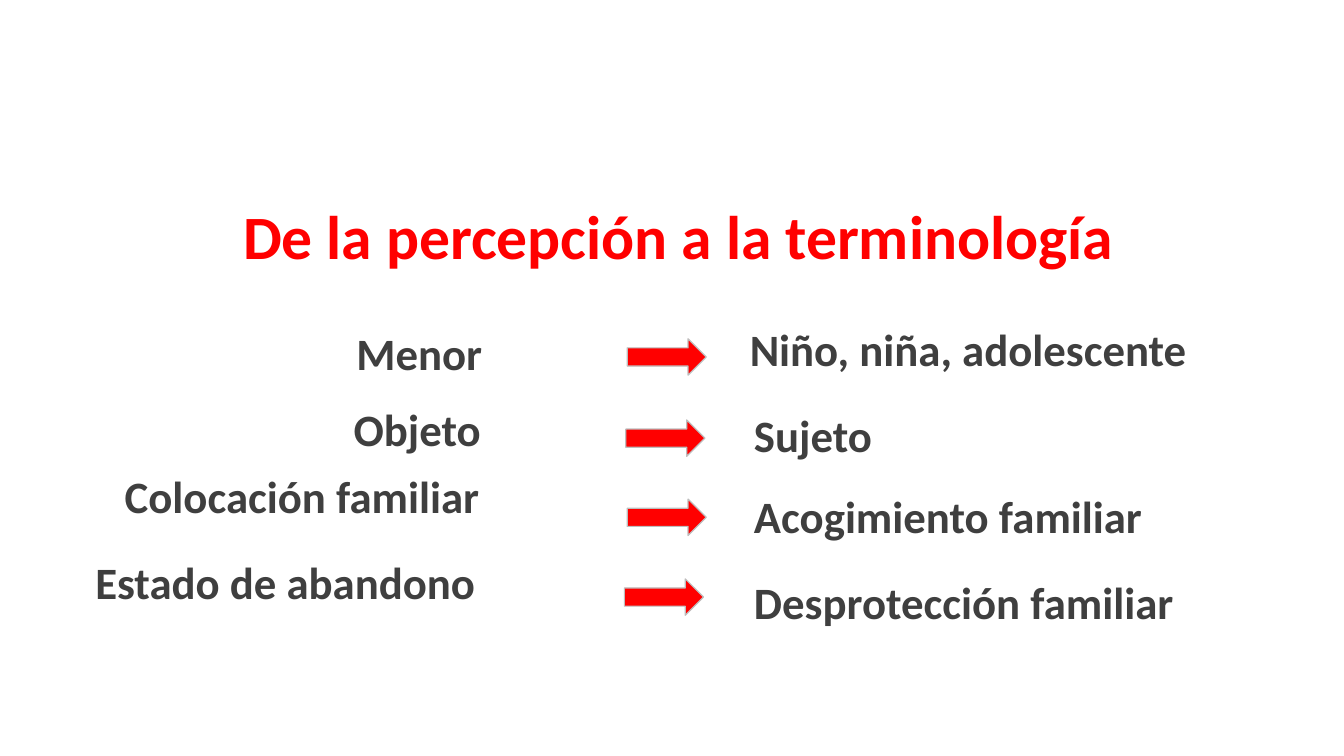
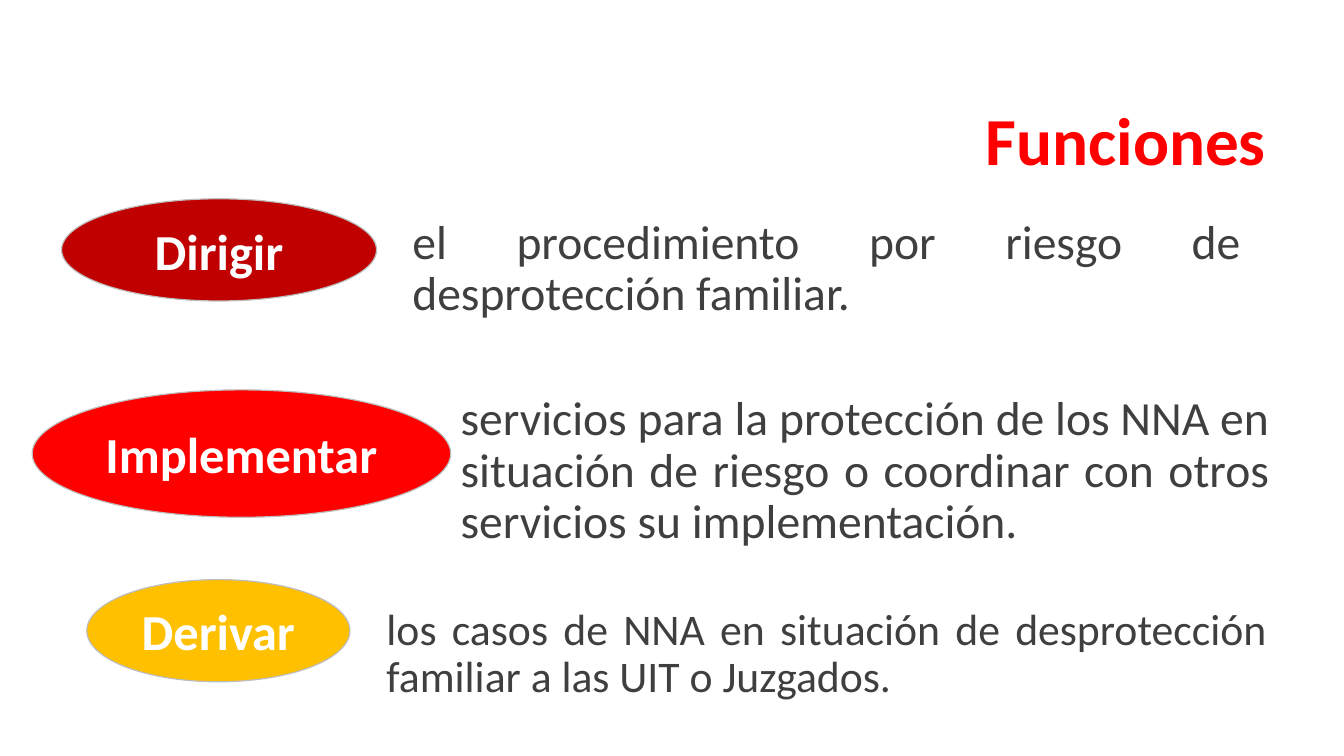
import pptx
import pptx.util
import pptx.dml.color
import pptx.enum.shapes
import pptx.enum.text

Pt = pptx.util.Pt
SHAPE = pptx.enum.shapes.MSO_SHAPE
ALIGN = pptx.enum.text.PP_ALIGN
ANCHOR = pptx.enum.text.MSO_ANCHOR

RED, DARK_RED, AMBER = "FF0000", "C00000", "FFC000"
GRAY, OUTLINE, WHITE = "3F3F3F", "BDBDBD", "FFFFFF"


def color(hex_code):
    return pptx.dml.color.RGBColor.from_string(hex_code)


class Deck:
    """Holds the shared style and the slide being built."""
    font = "Calibri"

    def __init__(self):
        self.prs = pptx.Presentation()
        self.prs.slide_width, self.prs.slide_height = Pt(960), Pt(540)
        self.slide = None

    def new_slide(self):
        self.slide = self.prs.slides.add_slide(self.prs.slide_layouts[6])

    def set_text(self, shape, text, size, ink, bold=False, align=ALIGN.LEFT,
                 spacing=1.0, anchor=ANCHOR.TOP):
        frame = shape.text_frame
        frame.word_wrap = True
        frame.vertical_anchor = anchor
        paragraph = frame.paragraphs[0]
        paragraph.text = text
        paragraph.alignment = align
        paragraph.line_spacing = spacing
        font = paragraph.font
        font.name, font.size, font.bold = self.font, Pt(size), bold
        font.color.rgb = color(ink)

    def text(self, box, text, size, ink, **style):
        shape = self.slide.shapes.add_textbox(*map(Pt, box))
        self.set_text(shape, text, size, ink, bold=True, **style)

    def title(self, box, text, size, align):
        self.text(box, text, size, RED, align=align, spacing=0.9)

    def shape(self, kind, box, fill, line=OUTLINE, weight=0.85):
        shape = self.slide.shapes.add_shape(kind, *map(Pt, box))
        shape.shadow.inherit = False
        shape.fill.solid()
        shape.fill.fore_color.rgb = color(fill)
        shape.line.color.rgb = color(line)
        shape.line.width = Pt(weight)
        return shape

    def arrow(self, left, top):
        self.shape(SHAPE.RIGHT_ARROW, (left, top, 56.5, 26), RED)

    def description(self, box, text, size):
        panel = self.shape(SHAPE.RECTANGLE, box, WHITE, WHITE, 5.5)
        self.set_text(panel, text, size, GRAY, align=ALIGN.JUSTIFY, spacing=0.9)

    def badge(self, box, text, fill):
        oval = self.shape(SHAPE.OVAL, box, fill)
        self.set_text(oval, text, 36, WHITE, bold=True, align=ALIGN.CENTER,
                      anchor=ANCHOR.MIDDLE)


def terminology_slide(deck):
    deck.new_slide()
    deck.title((145.5, 143.5, 679, 106), "De la percepción a la terminología",
               44, ALIGN.CENTER)
    # Old term, arrow and new term: text, left, top of each
    term_pairs = [
        (("Menor", 247.5, 229), (448, 242), ("Niño, niña, adolescente", 528.5, 226)),
        (("Objeto", 245.5, 283.5), (447, 300), ("Sujeto", 531.5, 287.5)),
        (("Colocación familiar", 82, 331.5), (448, 356.5),
         ("Acogimiento familiar", 531.5, 345.5)),
        (("Estado de abandono", 61, 392.5), (446, 413.5),
         ("Desprotección familiar", 531.5, 407)),
    ]
    for old_term, arrow_corner, new_term in term_pairs:
        for term, left, top in (old_term, new_term):
            deck.text((left, top, 360, 46), term, 32, GRAY)
        deck.arrow(*arrow_corner)


def functions_slide(deck):
    deck.new_slide()
    deck.title((258, 73.5, 653.5, 60), "Funciones", 48, ALIGN.RIGHT)
    # Verb, badge box, badge colour, description, its box and text size
    functions = [
        ("Dirigir", (44, 142, 225, 73), DARK_RED,
         "el procedimiento por riesgo de desprotección familiar.",
         (287.5, 152.5, 606, 82), 34),
        ("Implementar", (23, 278.5, 299, 91), RED,
         "servicios para la protección de los NNA en situación de riesgo "
         "o coordinar con otros servicios su implementación.",
         (322, 278.5, 592, 112.5), 34),
        ("Derivar", (62, 414, 188, 73), AMBER,
         "los casos de NNA en situación de desprotección familiar "
         "a las UIT o Juzgados.",
         (269, 430.5, 643, 77), 31.2),
    ]
    for verb, badge_box, fill, detail, detail_box, size in functions:
        deck.description(detail_box, detail, size)
        deck.badge(badge_box, verb, fill)


def main():
    deck = Deck()
    terminology_slide(deck)
    functions_slide(deck)
    deck.prs.save("out.pptx")


if __name__ == "__main__":
    main()
